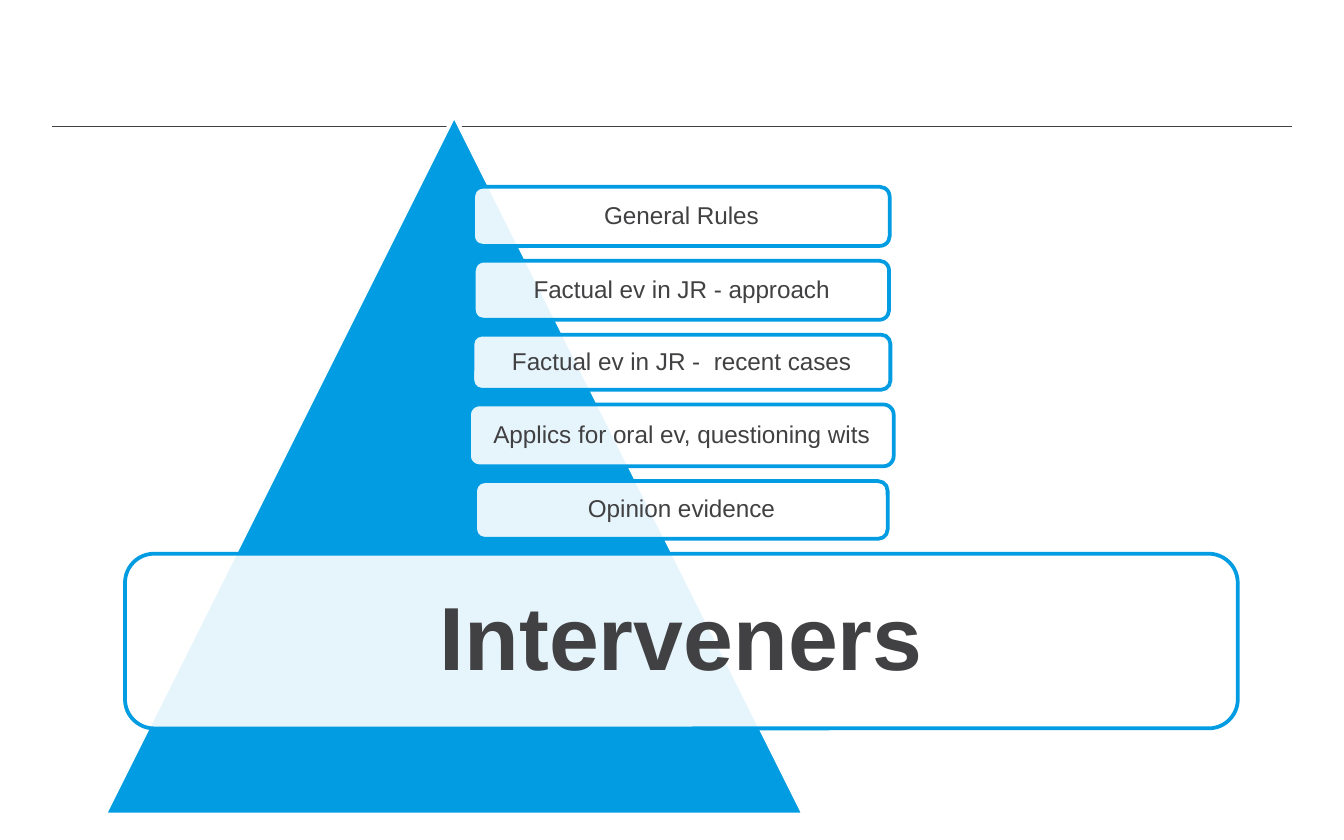
from lxml.etree import SubElement
from pptx import Presentation
from pptx.dml.color import RGBColor
from pptx.enum.shapes import MSO_CONNECTOR, MSO_SHAPE
from pptx.enum.text import MSO_ANCHOR, PP_ALIGN
from pptx.oxml.ns import qn
from pptx.util import Inches, Pt

BLUE = RGBColor(0x02, 0x9C, 0xE2)
DARK = RGBColor(0x41, 0x40, 0x42)
WHITE = RGBColor(0xFF, 0xFF, 0xFF)

CENTRE = 5.07
FIRST_TOP = 1.39
GAP = 0.11
# Topic, width, height
TOPICS = [
    ("General Rules", 3.10, 0.44),
    ("Factual ev in JR - approach", 3.09, 0.44),
    ("Factual ev in JR -  recent cases", 3.11, 0.41),
    ("Applics for oral ev, questioning wits", 3.16, 0.46),
    ("Opinion evidence", 3.07, 0.43),
]


class PyramidSlide:
    font_name = "Arial"
    outline = Pt(2)

    def __init__(self, slide):
        self.slide = slide

    def rule(self, left, right, top):
        line = self.slide.shapes.add_connector(
            MSO_CONNECTOR.STRAIGHT, Inches(left), Inches(top), Inches(right), Inches(top))
        line.line.color.rgb = DARK
        line.line.width = Pt(0.75)
        SubElement(line._element.spPr, qn("a:effectLst"))

    def shape(self, preset, left, top, width, height, fill, line):
        shape = self.slide.shapes.add_shape(
            preset, Inches(left), Inches(top), Inches(width), Inches(height))
        shape.shadow.inherit = False
        shape.fill.solid()
        shape.fill.fore_color.rgb = fill
        shape.line.color.rgb = line
        shape.line.width = self.outline
        return shape

    def topic_box(self, text, top, width, height, size=13, bold=False, inset=0.05):
        box = self.shape(MSO_SHAPE.ROUNDED_RECTANGLE, CENTRE - width / 2, top,
                         width, height, WHITE, BLUE)
        # Let the pyramid show faintly through the box
        colour = box._element.spPr.find(qn("a:solidFill")).find(qn("a:srgbClr"))
        SubElement(colour, qn("a:alpha"), val="90000")

        frame = box.text_frame
        frame.text = text
        frame.word_wrap = True
        frame.vertical_anchor = MSO_ANCHOR.MIDDLE
        frame.margin_left = frame.margin_right = Inches(inset)
        frame.margin_top = frame.margin_bottom = Inches(inset)
        paragraph = frame.paragraphs[0]
        paragraph.alignment = PP_ALIGN.CENTER
        paragraph.line_spacing = 0.9
        font = paragraph.runs[0].font
        font.name = self.font_name
        font.size = Pt(size)
        font.bold = bold
        font.color.rgb = DARK


def main():
    deck = Presentation()
    deck.slide_width, deck.slide_height = Inches(10), Inches(6.25)
    page = PyramidSlide(deck.slides.add_slide(deck.slide_layouts[6]))

    # Header rule and pyramid
    page.rule(0.39, 9.61, 0.94)
    page.shape(MSO_SHAPE.ISOSCELES_TRIANGLE, 0.78, 0.86, 5.2, 5.2, BLUE, WHITE)

    # Stacked topics
    top = FIRST_TOP
    for topic, width, height in TOPICS:
        page.topic_box(topic, top, width, height)
        top += height + GAP

    # Current topic, enlarged
    page.topic_box("Interveners", top, 8.28, 1.3, size=48, bold=True, inset=0.2)

    deck.save("out.pptx")


if __name__ == "__main__":
    main()
